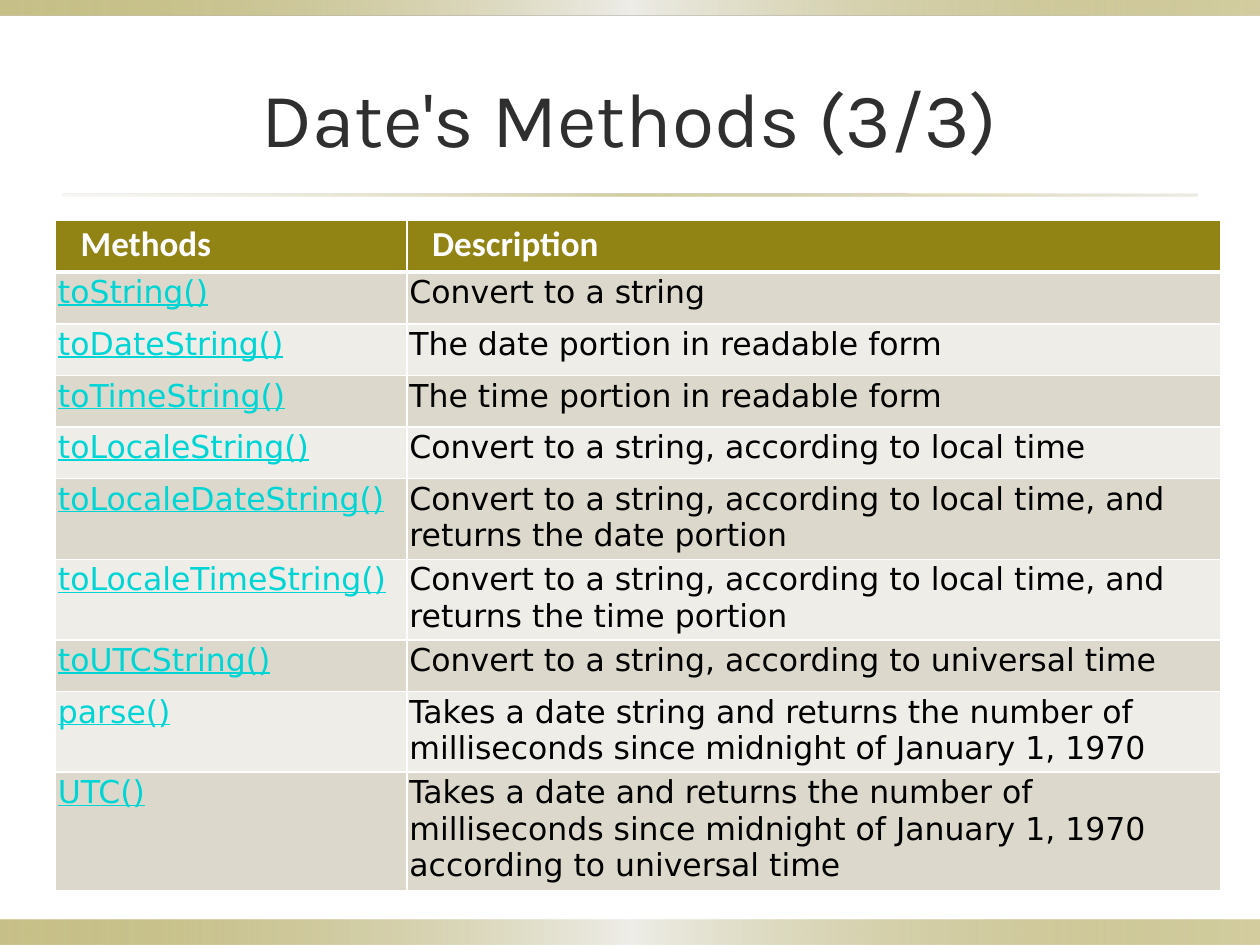
from lxml.etree import SubElement as Sub
from pptx import Presentation
from pptx.dml.color import RGBColor as RGB
from pptx.enum.shapes import MSO_SHAPE as Shape
from pptx.enum.text import MSO_ANCHOR as Anchor, PP_ALIGN as Align
from pptx.oxml.ns import qn
from pptx.util import Inches, Pt

OLIVE = RGB(0x91, 0x84, 0x15)
SAND = RGB(0xDC, 0xD9, 0xCC)
PALE = RGB(0xEE, 0xED, 0xE8)
CYAN = RGB(0x00, 0xD5, 0xD5)
DARK = RGB(0x2F, 0x2F, 0x2F)
WHITE = RGB(0xFF, 0xFF, 0xFF)
BLACK = RGB(0, 0, 0)

BAND = [(0, OLIVE, 50), (50, PALE, 100), (100, OLIVE, 40)]
RULE = [(0, SAND, 20), (50, OLIVE, 40), (100, SAND, 50)]

LOCAL = "Convert to a string, according to local time"
SINCE = "returns the number of milliseconds since midnight of January 1, 1970"
# Method, description, row height
ROWS = [
    ("toString()", "Convert to a string", 0.41),
    ("toDateString()", "The date portion in readable form", 0.41),
    ("toTimeString()", "The time portion in readable form", 0.41),
    ("toLocaleString()", LOCAL, 0.41),
    ("toLocaleDateString()", f"{LOCAL}, and returns the date portion", 0.64),
    ("toLocaleTimeString()", f"{LOCAL}, and returns the time portion", 0.64),
    ("toUTCString()", "Convert to a string, according to universal time", 0.41),
    ("parse()", f"Takes a date string and {SINCE}", 0.64),
    ("UTC()", f"Takes a date and {SINCE} according to universal time", 0.94),
]


def write(frame, text, font="DejaVu Sans", size=18, color=BLACK,
          bold=False, line=False, align=Align.LEFT):
    para = frame.paragraphs[0]
    para.alignment = align
    run = para.add_run()
    run.text = text
    run.font.name = font
    run.font.size = Pt(size)
    run.font.color.rgb = color
    run.font.bold = bold
    run.font.underline = line


def add_band(slide, box, stops):
    """Add a bar with a left-to-right gradient of (place, colour, opacity)."""
    bar = slide.shapes.add_shape(Shape.RECTANGLE, *map(Inches, box))
    bar.shadow.inherit = False
    bar.line.fill.background()
    bar.fill.gradient()
    bar.fill.gradient_angle = 0
    ramp = next(bar.element.iter(qn("a:gsLst")))
    for old in list(ramp):
        ramp.remove(old)
    for place, color, alpha in stops:
        stop = Sub(ramp, qn("a:gs"), pos=str(place * 1000))
        tone = Sub(stop, qn("a:srgbClr"), val=str(color))
        Sub(tone, qn("a:alpha"), val=str(alpha * 1000))


def add_title(slide, box, text):
    title = slide.shapes.title
    title.left, title.top, title.width, title.height = map(Inches, box)
    title.text_frame.vertical_anchor = Anchor.MIDDLE
    write(title.text_frame, text, font="Karla", size=44, color=DARK,
          align=Align.CENTER)


def set_cell(cell, text, fill, left=0.02, top=1, base=1, **style):
    cell.margin_left = Inches(left)
    cell.margin_right = cell.margin_top = cell.margin_bottom = Inches(0.02)
    # Borders come before the fill in the cell's properties
    props = cell._tc.get_or_add_tcPr()
    for side, width in (("L", 1), ("R", 1), ("T", top), ("B", base)):
        edge = Sub(props, qn(f"a:ln{side}"), w=str(Pt(width)))
        solid = Sub(edge, qn("a:solidFill"))
        Sub(solid, qn("a:srgbClr"), val=str(WHITE))
    cell.fill.solid()
    cell.fill.fore_color.rgb = fill
    write(cell.text_frame, text, **style)


def add_methods(slide, box, head, rows, split):
    """Add the table; split is the width of the first column."""
    frame = slide.shapes.add_table(len(rows) + 1, 2, *map(Inches, box))
    table = frame.table
    table.columns[0].width = Inches(split)
    table.columns[1].width = Inches(box[2] - split)

    # Header row
    table.rows[0].height = Inches(0.41)
    for col, text in enumerate(head):
        set_cell(table.cell(0, col), text, OLIVE, left=0.2, base=3,
                 font="Calibri", size=20, color=WHITE, bold=True)

    # Banded body rows
    for row, (name, about, high) in enumerate(rows, 1):
        table.rows[row].height = Inches(high)
        fill = SAND if row % 2 else PALE
        top = 3 if row == 1 else 1
        set_cell(table.cell(row, 0), name, fill, top=top, color=CYAN, line=True)
        set_cell(table.cell(row, 1), about, fill, top=top)


def main():
    deck = Presentation()
    deck.slide_width, deck.slide_height = Inches(10), Inches(7.5)
    slide = deck.slides.add_slide(deck.slide_layouts[5])

    # Bottom and top bands, and the rule under the title
    add_band(slide, (0, 7.3, 10, 0.2), BAND)
    add_band(slide, (0, 0, 10, 0.12), BAND)
    add_band(slide, (0.5, 1.54, 9, 0.02), RULE)

    add_title(slide, (0.5, 0.3, 9, 1.25), "Date's Methods (3/3)")
    add_methods(slide, (0.44, 1.75, 9.25, 5.3), ("Methods", "Description"),
                ROWS, split=2.79)
    deck.save("out.pptx")


if __name__ == "__main__":
    main()
